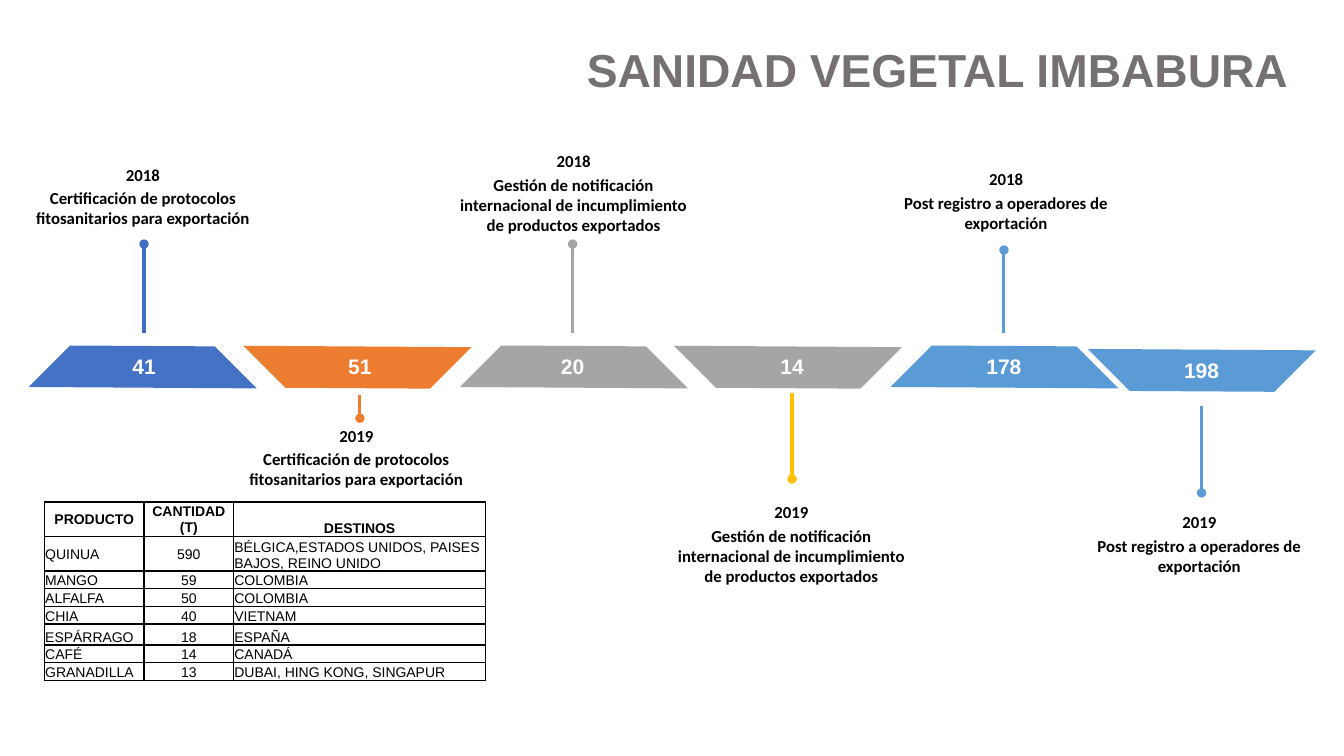
from lxml import etree
from pptx import Presentation
from pptx.dml.color import RGBColor
from pptx.enum.shapes import MSO_CONNECTOR, MSO_SHAPE
from pptx.enum.text import MSO_ANCHOR, MSO_AUTO_SIZE, PP_ALIGN
from pptx.oxml.ns import qn
from pptx.util import Cm, Pt

STRIPE, STRAIGHT = MSO_SHAPE.DIAGONAL_STRIPE, MSO_CONNECTOR.STRAIGHT
LEFT, CENTER, RIGHT = PP_ALIGN.LEFT, PP_ALIGN.CENTER, PP_ALIGN.RIGHT
TOP, MIDDLE, BOTTOM = MSO_ANCHOR.TOP, MSO_ANCHOR.MIDDLE, MSO_ANCHOR.BOTTOM
GROW = MSO_AUTO_SIZE.SHAPE_TO_FIT_TEXT


def rgb(value):
    return RGBColor.from_string(value)


def add_text(box, lines, font, size, color, align, anchor=TOP, wrap=False):
    left, top, width, height = box
    frame = slide.shapes.add_textbox(Cm(left), Cm(top), Cm(width), Cm(height)).text_frame
    frame.word_wrap = wrap
    frame.auto_size = GROW
    frame.vertical_anchor = anchor
    frame.text = "\n".join(lines)
    for paragraph in frame.paragraphs:
        paragraph.alignment = align
        paragraph.font.name = font
        paragraph.font.size = Pt(size)
        paragraph.font.bold = True
        paragraph.font.color.rgb = rgb(color)
    return frame


prs = Presentation()
prs.slide_width, prs.slide_height = Cm(33.87), Cm(19.05)
slide = prs.slides.add_slide(prs.slide_layouts[6])

# Title
title = add_text((14.22, 0.56, 18.5, 1.85), ["SANIDAD VEGETAL IMBABURA"],
                 "Arial", 33, "767171", RIGHT)
title.paragraphs[0].line_spacing = Pt(50)

# Timeline: odd milestones are labelled above the band, even ones below
CERTIFICATION = "Certificación de protocolos fitosanitarios para exportación"
NOTIFICATION = "Gestión de notificación internacional de incumplimiento de productos exportados"
REGISTRATION = "Post registro a operadores de exportación"
# count, year, topic, stripe colour, stem colour, stripe left, drop of the band,
# stem (x, start, end), label (left, top, width, height)
milestones = [
    ("41", "2018", CERTIFICATION, "4472C4", "3F6FC3", 1.55, 0,
     (3.63, 8.38, 6.15), (0.25, 3.99, 6.71, 1.96)),
    ("51", "2019", CERTIFICATION, "ED7D31", "ED7D31", 6.96, 0,
     (9.07, 9.96, 10.54), (5.87, 10.57, 6.22, 1.96)),
    ("20", "2018", NOTIFICATION, "A5A5A5", "A5A5A5", 12.42, 0,
     (14.43, 8.38, 6.15), (11.1, 3.66, 6.71, 2.46)),
    ("14", "2019", NOTIFICATION, "A5A5A5", "FFC000", 17.81, 0,
     (19.96, 9.91, 12.07), (16.59, 12.5, 6.71, 2.46)),
    ("178", "2018", REGISTRATION, "5B9BD5", "5B9BD5", 23.27, 0,
     (25.3, 8.38, 6.3), (22, 4.11, 6.71, 1.96)),
    ("198", "2019", REGISTRATION, "5B9BD5", "5B9BD5", 28.24, 0.08,
     (30.28, 10.24, 12.42), (26.87, 12.75, 6.71, 1.96)),
]
for count, year, topic, fill, stem_color, left, drop, stem_place, label_box in milestones:
    stem_x, stem_start, stem_end = stem_place
    above = stem_end < stem_start

    stripe_top = (7.75 if above else 6.71) + drop
    stripe = slide.shapes.add_shape(STRIPE, Cm(left), Cm(stripe_top), Cm(4.09), Cm(4.04))
    stripe.adjustments[0] = 0.634
    stripe.rotation = 45 if above else 225
    stripe.shadow.inherit = False
    stripe.fill.solid()
    stripe.fill.fore_color.rgb = rgb(fill)
    stripe.line.fill.background()

    stem = slide.shapes.add_connector(STRAIGHT, Cm(stem_x), Cm(stem_start),
                                      Cm(stem_x), Cm(stem_end))
    stem.line.color.rgb = rgb(stem_color)
    stem.line.width = Pt(2.25)
    etree.SubElement(stem.line._get_or_add_ln(), qn("a:tailEnd"), type="oval")
    etree.SubElement(stem._element.spPr, qn("a:effectLst"))

    count_width = 1.4 if len(count) == 3 else 1.12
    add_text((stem_x - count_width / 2, 8.79 + drop, count_width, 0.89), [count],
             "Arial", 15, "FFFFFF", CENTER, MIDDLE)

    label = add_text(label_box, [year, topic], "Calibri", 12, "000000", CENTER, wrap=True)
    label.margin_left = label.margin_right = Cm(0.3)
    label.margin_top = label.margin_bottom = Cm(0.15)
    label.paragraphs[1].space_before = Pt(2.5)

# Export table
exports = [
    ("PRODUCTO", "CANTIDAD (T)", "DESTINOS"),
    ("QUINUA", "590", "BÉLGICA,ESTADOS UNIDOS, PAISES BAJOS, REINO UNIDO"),
    ("MANGO", "59", "COLOMBIA"),
    ("ALFALFA", "50", "COLOMBIA"),
    ("CHIA", "40", "VIETNAM"),
    ("ESPÁRRAGO", "18", "ESPAÑA"),
    ("CAFÉ", "14", "CANADÁ"),
    ("GRANADILLA", "13", "DUBAI, HING KONG, SINGAPUR"),
]
column_widths = [2.51, 2.26, 6.35]
row_heights = [0.87, 0.87, 0.44, 0.44, 0.44, 0.53, 0.44, 0.44]
table = slide.shapes.add_table(len(exports), 3, Cm(1.12), Cm(12.65),
                               Cm(sum(column_widths)), Cm(sum(row_heights))).table
table.first_row = table.horz_banding = False
for column, width in zip(table.columns, column_widths):
    column.width = Cm(width)
for r, (values, height) in enumerate(zip(exports, row_heights)):
    table.rows[r].height = Cm(height)
    for c, value in enumerate(values):
        cell = table.cell(r, c)
        cell.text = value
        cell.margin_left = cell.margin_right = cell.margin_top = Cm(0.02)
        cell.margin_bottom = 0
        cell.vertical_anchor = MIDDLE if r < 2 and c < 2 else BOTTOM
        paragraph = cell.text_frame.paragraphs[0]
        paragraph.alignment = CENTER if r == 0 or c == 1 else LEFT
        paragraph.font.name = "Arial"
        paragraph.font.size = Pt(10)
        paragraph.font.bold = r == 0
        paragraph.font.color.rgb = rgb("000000")
        for side in ("a:lnL", "a:lnR", "a:lnT", "a:lnB"):
            border = etree.SubElement(cell._tc.get_or_add_tcPr(), qn(side), w=str(Pt(1)))
            border_fill = etree.SubElement(border, qn("a:solidFill"))
            etree.SubElement(border_fill, qn("a:srgbClr"), val="000000")
        cell.fill.background()

prs.save("out.pptx")
